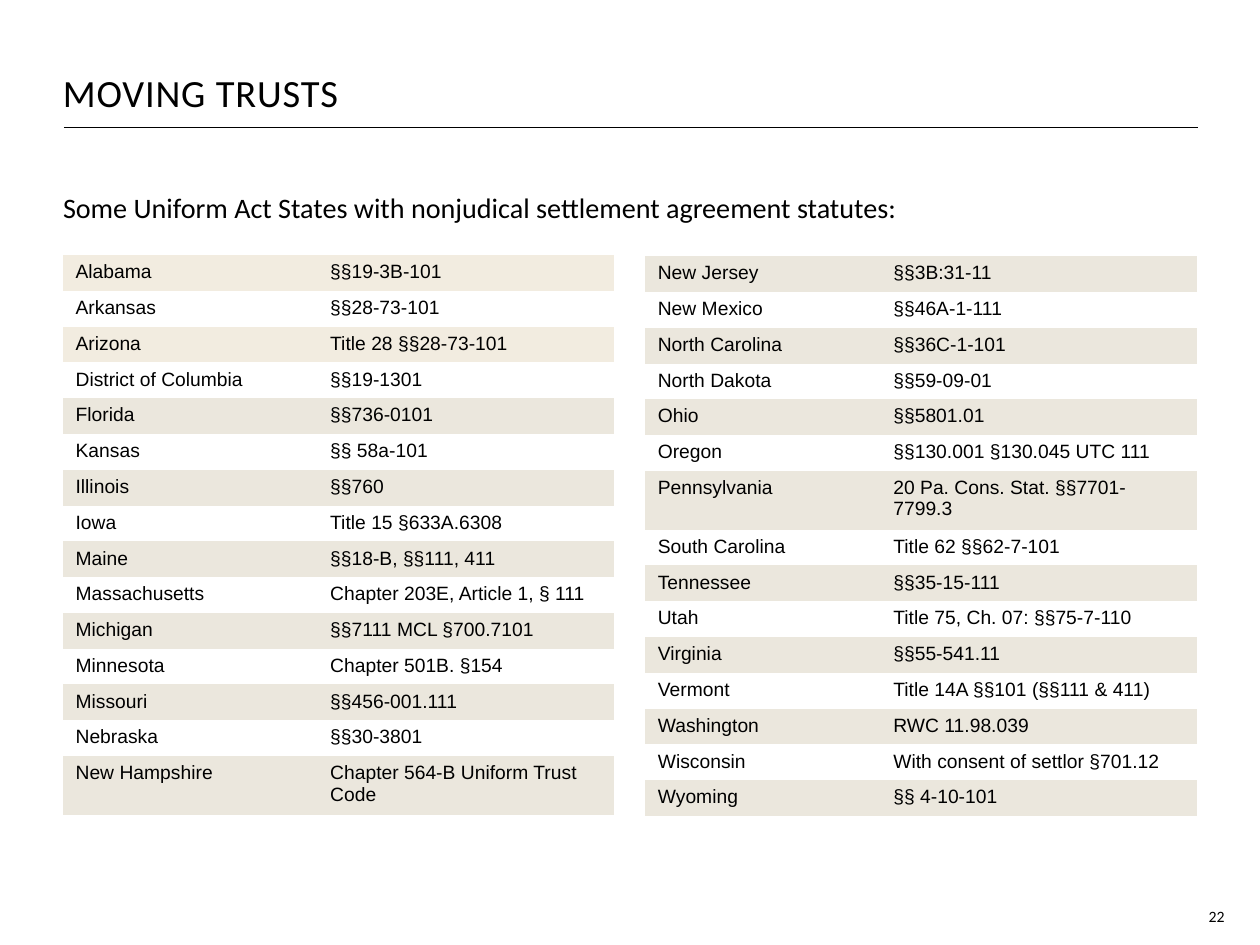
from lxml.etree import SubElement
from pptx import Presentation
from pptx.dml.color import RGBColor
from pptx.enum.shapes import MSO_CONNECTOR as Connector
from pptx.enum.text import MSO_ANCHOR as Anchor, PP_ALIGN as Align
from pptx.oxml.ns import qn
from pptx.util import Pt

COLORS = {"text": "000000", "plain": "FFFFFF", "band": "EBE7DD", "light_band": "F2ECE0"}
NO_GRID_STYLE = "{2D5ABB26-0587-4C30-8999-92F81FD0307C}"
ROW_HEIGHT = 20.2
TALL_ROW_HEIGHT = 32.4
MARGINS = ("margin_left", "margin_top", "margin_right", "margin_bottom")

LEFT_STATES = [
    ("Alabama", "§§19-3B-101"),
    ("Arkansas", "§§28-73-101"),
    ("Arizona", "Title 28 §§28-73-101"),
    ("District of Columbia", "§§19-1301"),
    ("Florida", "§§736-0101"),
    ("Kansas", "§§ 58a-101"),
    ("Illinois", "§§760"),
    ("Iowa", "Title 15 §633A.6308"),
    ("Maine", "§§18-B, §§111, 411"),
    ("Massachusetts", "Chapter 203E, Article 1, § 111"),
    ("Michigan", "§§7111 MCL §700.7101"),
    ("Minnesota", "Chapter 501B. §154"),
    ("Missouri", "§§456-001.111"),
    ("Nebraska", "§§30-3801"),
    ("New Hampshire", "Chapter 564-B Uniform Trust Code"),
]
RIGHT_STATES = [
    ("New Jersey", "§§3B:31-11"),
    ("New Mexico", "§§46A-1-111"),
    ("North Carolina", "§§36C-1-101"),
    ("North Dakota", "§§59-09-01"),
    ("Ohio", "§§5801.01"),
    ("Oregon", "§§130.001 §130.045 UTC 111"),
    ("Pennsylvania", "20 Pa. Cons. Stat. §§7701-7799.3"),
    ("South Carolina", "Title 62 §§62-7-101"),
    ("Tennessee", "§§35-15-111"),
    ("Utah", "Title 75, Ch. 07: §§75-7-110"),
    ("Virginia", "§§55-541.11"),
    ("Vermont", "Title 14A §§101 (§§111 & 411)"),
    ("Washington", "RWC 11.98.039"),
    ("Wisconsin", "With consent of settlor §701.12"),
    ("Wyoming", "§§ 4-10-101"),
]


def color(name):
    return RGBColor.from_string(COLORS[name])


def apply_format(target, values):
    for name, value in values.items():
        setattr(target, name, value)


def write_text(frame, text, font_name, size, paragraph_format=None):
    paragraph = frame.paragraphs[0]
    apply_format(paragraph, paragraph_format or {})
    run = paragraph.add_run()
    run.text = text
    apply_format(run.font, {"name": font_name, "size": Pt(size)})
    run.font.color.rgb = color("text")
    return run


def add_text(slide, box, text, size, anchor=Anchor.TOP, paragraph_format=None):
    frame = slide.shapes.add_textbox(*map(Pt, box)).text_frame
    apply_format(frame, {"word_wrap": True, "vertical_anchor": anchor})
    apply_format(frame, dict.fromkeys(MARGINS, Pt(0)))
    return write_text(frame, text, "Calibri", size, paragraph_format)


def add_rule(slide, left, right, top):
    rule = slide.shapes.add_connector(Connector.STRAIGHT, Pt(left), Pt(top), Pt(right), Pt(top))
    rule.line.width = Pt(0.5)
    rule.line.color.rgb = color("text")
    SubElement(rule.element.spPr, qn("a:effectLst"))


def add_state_table(slide, left, top, widths, states, tall_row, light_rows=()):
    heights = [TALL_ROW_HEIGHT if row == tall_row else ROW_HEIGHT for row in range(len(states))]
    shape = slide.shapes.add_table(
        len(states), len(widths), Pt(left), Pt(top), Pt(sum(widths)), Pt(sum(heights)))
    table = shape.table
    apply_format(table, {"first_row": False, "horz_banding": False})
    for style in shape.element.iter(qn("a:tableStyleId")):
        style.text = NO_GRID_STYLE
    for column, width in zip(table.columns, widths):
        column.width = Pt(width)
    for index, (state, height) in enumerate(zip(states, heights)):
        table.rows[index].height = Pt(height)
        band = "light_band" if index in light_rows else "plain" if index % 2 else "band"
        for cell, text in zip(table.rows[index].cells, state):
            apply_format(cell, dict(zip(MARGINS, map(Pt, (7.2, 3.6, 7.2, 3.6)))))
            cell.fill.solid()
            cell.fill.fore_color.rgb = color(band)
            write_text(cell.text_frame, text, "Arial", 11)


def main():
    presentation = Presentation()
    apply_format(presentation, {"slide_width": Pt(720), "slide_height": Pt(540)})
    slide = presentation.slides.add_slide(presentation.slide_layouts[6])

    add_rule(slide, 36.5, 684.5, 73)
    title = add_text(slide, (36, 41, 504, 25.2), "MOVING TRUSTS", 22,
                     Anchor.BOTTOM, {"line_spacing": 0.95})
    title.font._element.set("spc", "50")
    add_text(slide, (36, 112.3, 651.6, 17.3),
             "Some Uniform Act States with nonjudical settlement agreement statutes:",
             16.1, paragraph_format={"line_spacing": 0.8})
    add_state_table(slide, 36, 145.8, (145.5, 169.3), LEFT_STATES, 14, light_rows=(0, 2))
    add_state_table(slide, 368.7, 146.4, (134.6, 180.7), RIGHT_STATES, 6)
    add_text(slide, (671.8, 511.2, 28, 18), "22", 9, Anchor.BOTTOM, {"alignment": Align.RIGHT})

    presentation.save("out.pptx")


if __name__ == "__main__":
    main()
